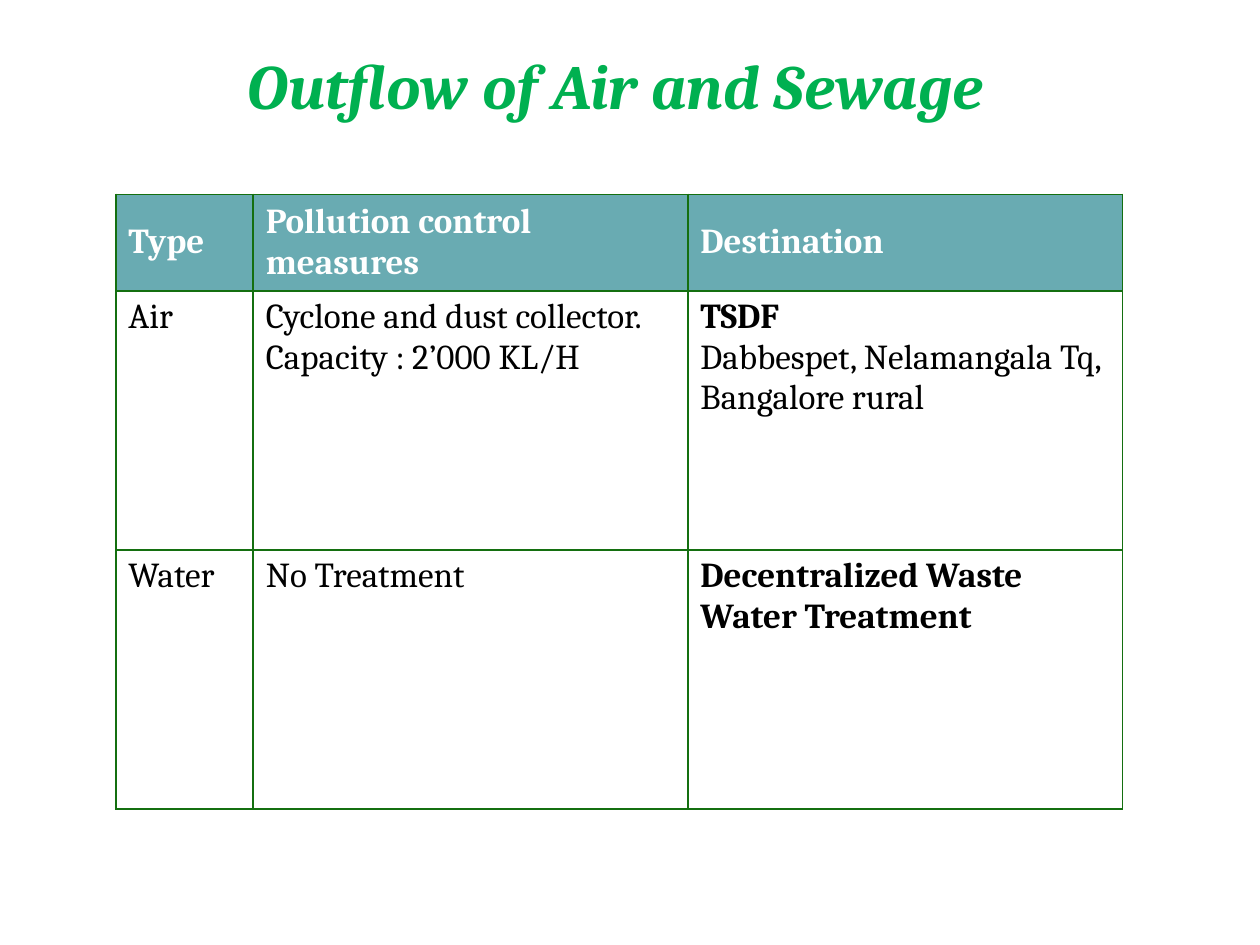
from dataclasses import dataclass

from lxml import etree
from pptx import Presentation
from pptx import util as u
from pptx.dml.color import RGBColor
from pptx.enum import text
from pptx.oxml.ns import qn

Pt = u.Pt


@dataclass(frozen=True)
class Theme:
    font: str = "Cambria"
    title_size: int = 36
    body_size: int = 20
    title: str = "00B050"
    header: str = "44969F"
    header_alpha: int = 80
    header_text: str = "FFFFFF"
    body_text: str = "000000"
    border: str = "146F10"
    border_width: int = 1


class Deck:
    def __init__(self, theme):
        self.theme = theme
        self.prs = Presentation()
        self.prs.slide_width, self.prs.slide_height = Pt(720), Pt(540)
        self.slide = self.prs.slides.add_slide(self.prs.slide_layouts[6])

    def add_run(self, p, words, size, color, bold=False, italic=False):
        r = p.add_run()
        r.text = words
        f = r.font
        f.name, f.size, f.bold, f.italic = self.theme.font, Pt(size), bold, italic
        f.color.rgb = RGBColor.from_string(color)

    def add_title(self, words, left, top, width, height):
        sp = self.slide.shapes.add_textbox(Pt(left), Pt(top), Pt(width), Pt(height))
        tf = sp.text_frame
        tf.word_wrap = True
        tf.vertical_anchor = text.MSO_ANCHOR.MIDDLE
        self.add_run(tf.paragraphs[0], words, self.theme.title_size,
                     self.theme.title, bold=True, italic=True)

    def add_table(self, rows, left, top, col_widths, row_heights):
        """Each cell is a list of (words, bold) paragraphs; row 0 is the header."""
        frame = self.slide.shapes.add_table(
            len(rows), len(col_widths), Pt(left), Pt(top),
            Pt(sum(col_widths)), Pt(sum(row_heights)))
        table = frame.table
        table.horz_banding = False
        for col, width in zip(table.columns, col_widths):
            col.width = Pt(width)
        for i, (cells, height) in enumerate(zip(rows, row_heights)):
            table.rows[i].height = Pt(height)
            for j, paragraphs in enumerate(cells):
                self.fill_cell(table.cell(i, j), paragraphs, header=i == 0)

    def fill_cell(self, cell, paragraphs, header):
        th = self.theme
        self.add_borders(cell)
        if header:
            cell.vertical_anchor = text.MSO_ANCHOR.MIDDLE
            cell.fill.solid()
            cell.fill.fore_color.rgb = RGBColor.from_string(th.header)
            color = cell._tc.tcPr.find(qn("a:solidFill"))[0]
            etree.SubElement(color, qn("a:alpha"), val=str(th.header_alpha * 1000))
        else:
            cell.fill.background()
        tf = cell.text_frame
        for n, (words, bold) in enumerate(paragraphs):
            p = tf.add_paragraph() if n else tf.paragraphs[0]
            self.add_run(p, words, th.body_size,
                         th.header_text if header else th.body_text, bold)

    def add_borders(self, cell):
        tc_pr = cell._tc.get_or_add_tcPr()
        for side in ("lnL", "lnR", "lnT", "lnB"):
            ln = etree.SubElement(tc_pr, qn(f"a:{side}"),
                                  w=str(Pt(self.theme.border_width)))
            fill = etree.SubElement(ln, qn("a:solidFill"))
            etree.SubElement(fill, qn("a:srgbClr"), val=self.theme.border)


def main():
    deck = Deck(Theme())
    deck.add_title("Outflow of Air and Sewage", 134.6, 23.8, 452, 49)
    rows = [
        [[("Type", True)],
         [("Pollution control measures", True)],
         [("Destination", True)]],
        [[("Air", False)],
         [("Cyclone and dust collector.", False), ("Capacity : 2’000 KL/H", False)],
         [("TSDF", True), ("Dabbespet, Nelamangala Tq, Bangalore rural", False)]],
        [[("Water", False)],
         [("No Treatment", False)],
         [("Decentralized Waste Water Treatment", True)]],
    ]
    deck.add_table(rows, 66.2, 111, (78.5, 248.4, 248.4), (53, 148, 148))
    deck.prs.save("out.pptx")


if __name__ == "__main__":
    main()
